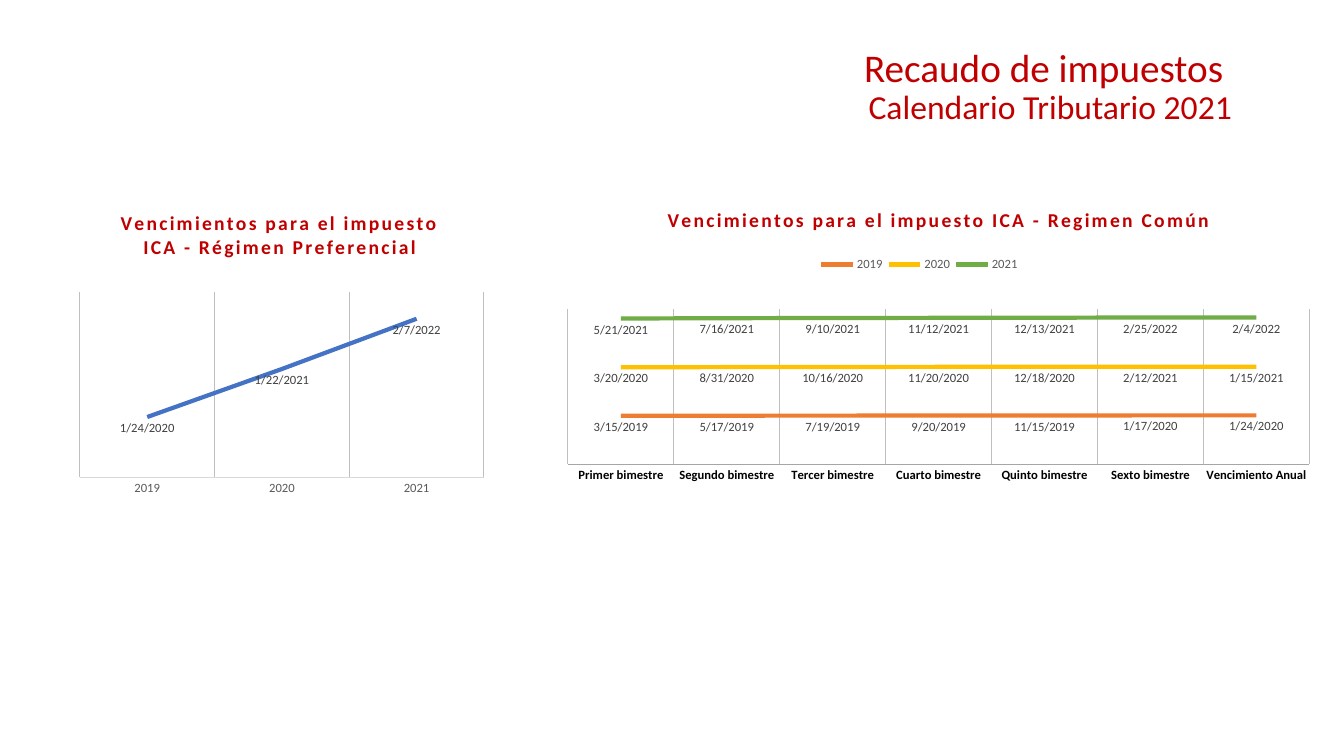
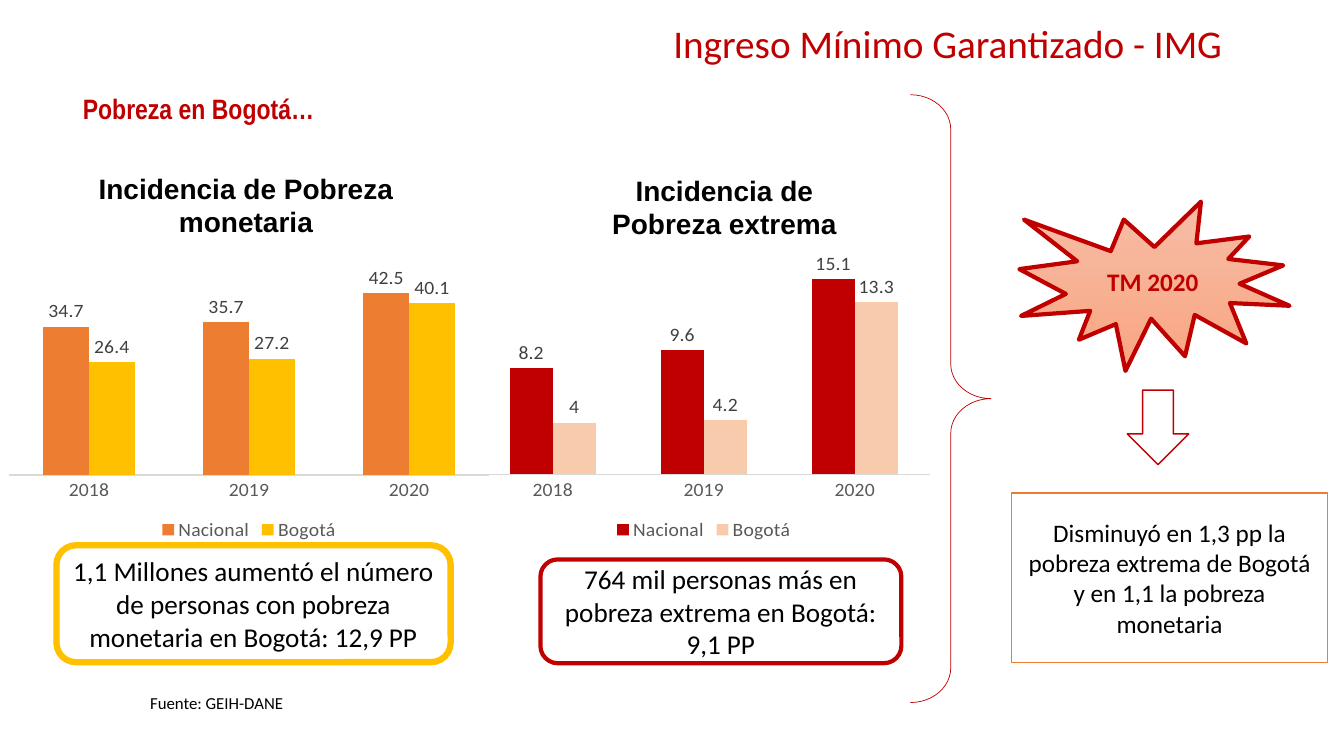
from lxml import etree
from pptx import Presentation
from pptx.chart.data import CategoryChartData
from pptx.dml.color import RGBColor
from pptx.enum.chart import XL_CHART_TYPE, XL_LABEL_POSITION, XL_LEGEND_POSITION, XL_TICK_MARK
from pptx.enum.shapes import MSO_SHAPE
from pptx.enum.text import MSO_ANCHOR, PP_ALIGN
from pptx.oxml.ns import qn
from pptx.util import Inches, Pt

RED = RGBColor(0xC0, 0x00, 0x00)
ORANGE = RGBColor(0xED, 0x7D, 0x31)
GOLD = RGBColor(0xFF, 0xC0, 0x00)
GREEN = RGBColor(0x70, 0xAD, 0x47)
BLUE = RGBColor(0x44, 0x72, 0xC4)
PEACH = RGBColor(0xF8, 0xCB, 0xAD)
SEAL_TOP = RGBColor(0xF7, 0xBD, 0xA5)
SEAL_BOTTOM = RGBColor(0xF8, 0xA5, 0x82)
BLACK = RGBColor(0x00, 0x00, 0x00)
WHITE = RGBColor(0xFF, 0xFF, 0xFF)
LABEL_GREY = RGBColor(0x40, 0x40, 0x40)
TEXT_GREY = RGBColor(0x59, 0x59, 0x59)
AXIS_GREY = RGBColor(0xD9, 0xD9, 0xD9)
DARK_AXIS_GREY = RGBColor(0xA6, 0xA6, 0xA6)
GRID_GREY = RGBColor(0xBF, 0xBF, 0xBF)

LEFT, CENTER, RIGHT = PP_ALIGN.LEFT, PP_ALIGN.CENTER, PP_ALIGN.RIGHT
TOP, MIDDLE = MSO_ANCHOR.TOP, MSO_ANCHOR.MIDDLE
LINE, LINE_STACKED = XL_CHART_TYPE.LINE, XL_CHART_TYPE.LINE_STACKED
COLUMNS = XL_CHART_TYPE.COLUMN_CLUSTERED
BELOW, OUTSIDE = XL_LABEL_POSITION.BELOW, XL_LABEL_POSITION.OUTSIDE_END
LEGEND_TOP, LEGEND_BOTTOM = XL_LEGEND_POSITION.TOP, XL_LEGEND_POSITION.BOTTOM
NO_TICK = XL_TICK_MARK.NONE
ROUNDED, RECTANGLE = MSO_SHAPE.ROUNDED_RECTANGLE, MSO_SHAPE.RECTANGLE
BRACE, SEAL, ARROW = MSO_SHAPE.RIGHT_BRACE, MSO_SHAPE.EXPLOSION1, MSO_SHAPE.DOWN_ARROW

DATE_FORMAT = "m/d/yyyy"
TITLE_ONLY = 5


def inches(box):
    return [Inches(v) for v in box]


def set_font(font, size, color, bold=False, name="Calibri"):
    values = {"size": Pt(size), "bold": bold, "name": name}
    for key, value in values.items():
        setattr(font, key, value)
    font.color.rgb = color


def set_line(line, color, width):
    line.color.rgb = color
    line.width = Pt(width)


def write(shape, lines, color=BLACK, align=CENTER, anchor=MIDDLE, bold=False,
          name="Calibri", spacing=None):
    """Fill a shape with (text, size) lines, one paragraph each."""
    tf = shape.text_frame
    tf.word_wrap = True
    tf.vertical_anchor = anchor
    for i, (text, size) in enumerate(lines):
        p = tf.add_paragraph() if i else tf.paragraphs[0]
        p.alignment = align
        p.line_spacing = spacing
        r = p.add_run()
        r.text = text
        set_font(r.font, size, color, bold, name)


def add_title(s, box, lines):
    title = s.shapes.title
    title.left, title.top, title.width, title.height = inches(box)
    title.text_frame.margin_top = title.text_frame.margin_bottom = 0
    write(title, lines, RED, RIGHT, spacing=0.9)


def add_text(s, box, text, size, **style):
    write(s.shapes.add_textbox(*inches(box)), [(text, size)], **style)


def add_shape(s, kind, box, line_color, width, fill=WHITE):
    shape = s.shapes.add_shape(kind, *inches(box))
    shape.shadow.inherit = False
    if fill is None:
        shape.fill.background()
    else:
        shape.fill.solid()
        shape.fill.fore_color.rgb = fill
    set_line(shape.line, line_color, width)
    return shape


def set_layout(parent, index, box, inner=False):
    """Place a plot area or legend by fractions of its chart."""
    for old in parent.findall(qn("c:layout")):
        parent.remove(old)
    layout = etree.Element(qn("c:layout"))
    manual = etree.SubElement(layout, qn("c:manualLayout"))
    values = {"layoutTarget": "inner"} if inner else {}
    values.update(xMode="edge", yMode="edge", **dict(zip("xywh", box)))
    for key, value in values.items():
        etree.SubElement(manual, qn("c:" + key)).set("val", str(value))
    parent.insert(index, layout)


def add_chart(s, kind, box, categories, series, scale, size, label_position, number_format="General",
              axis_line=(AXIS_GREY, 0.75), axis_font=(TEXT_GREY, False), legend=None):
    """Add a chart; series holds (name, values, colour)."""
    data = CategoryChartData(number_format=number_format)
    data.categories = categories
    for name, values, _ in series:
        data.add_series(name, values)
    chart = s.shapes.add_chart(kind, *inches(box), data).chart
    set_font(chart.font, size, BLACK)
    chart.has_title = False

    chart.has_legend = legend is not None
    if chart.has_legend:
        chart.legend.position = legend
        chart.legend.include_in_layout = False
        set_font(chart.legend.font, size, TEXT_GREY)

    axis = chart.category_axis
    axis.major_tick_mark = axis.minor_tick_mark = NO_TICK
    set_font(axis.tick_labels.font, size, *axis_font)
    set_line(axis.format.line, *axis_line)
    values_axis = chart.value_axis
    values_axis.minimum_scale, values_axis.maximum_scale = scale
    values_axis.has_major_gridlines = False
    values_axis.visible = False

    plot = chart.plots[0]
    plot.vary_by_categories = False
    for item, (_, _, color) in zip(plot.series, series):
        if kind == COLUMNS:
            item.format.fill.solid()
            item.format.fill.fore_color.rgb = color
        else:
            set_line(item.format.line, color, 3)
            item.smooth = False
        labels = item.data_labels
        labels.show_value = True
        labels.position = label_position
        labels.number_format = number_format
        labels.number_format_is_linked = False
        set_font(labels.font, size, LABEL_GREY)
    return chart


def add_due_dates(s, kind, box, title, plot_box, categories, series, scale, **style):
    """Add a line chart of dates with a spaced red title and vertical gridlines."""
    chart = add_chart(s, kind, box, categories, series, scale, 9, BELOW, DATE_FORMAT, **style)
    chart.has_title = True
    r = chart.chart_title.text_frame.paragraphs[0].add_run()
    r.text = title
    set_font(r.font, 14, RED, True)
    r.font._element.set("spc", "150")
    chart.chart_title.include_in_layout = False
    chart.category_axis.has_major_gridlines = True
    set_line(chart.category_axis.major_gridlines.format.line, GRID_GREY, 0.75)
    set_layout(chart.plots[0]._element.getparent(), 0, plot_box, inner=True)
    return chart


def add_poverty_columns(s, box, national, city, scale):
    """Add a column chart from the (values, colour) of the country and of the city."""
    series = [("Nacional", *national), ("Bogotá", *city)]
    chart = add_chart(s, COLUMNS, box, ["2018", "2019", "2020"], series, scale, 14, OUTSIDE,
                      legend=LEGEND_BOTTOM)
    chart.plots[0].gap_width = 150
    chart.plots[0].overlap = 0


def add_programme_effect(s, left, top):
    """Add the seal, the arrow and the outcome box in one column."""
    seal = add_shape(s, SEAL, (left + 0.08, top, 2.68, 1.68), RED, 3)
    seal.fill.gradient()
    seal.fill.gradient_angle = 270
    for stop, color in zip(seal.fill.gradient_stops, (SEAL_TOP, SEAL_BOTTOM)):
        stop.color.rgb = color
    write(seal, [("TM 2020", 18)], RED, bold=True)
    add_shape(s, ARROW, (left + 1.15, top + 1.87, 0.61, 0.74), RED, 1)
    outcome = add_shape(s, RECTANGLE, (left, top + 2.89, 3.14, 1.68), ORANGE, 1)
    write(outcome, [("Disminuyó en 1,3 pp la pobreza extrema de Bogotá "
                     "y en 1,1 la pobreza monetaria", 18)])


def tax_calendar_slide(prs):
    s = prs.slides.add_slide(prs.slide_layouts[TITLE_ONLY])
    add_title(s, (0.21, 0.47, 12.11, 0.8),
              [("Recaudo de impuestos ", 28), ("Calendario Tributario 2021", 24)])
    periods = ["Primer bimestre", "Segundo bimestre", "Tercer bimestre", "Cuarto bimestre",
               "Quinto bimestre", "Sexto bimestre", "Vencimiento Anual"]
    years = [
        ("2019", (43539, 43602, 43665, 43728, 43784, 43847, 43854), ORANGE),
        ("2020", (43910, 44074, 44120, 44155, 44183, 44239, 44211), GOLD),
        ("2021", (44337, 44393, 44449, 44512, 44543, 44617, 44596), GREEN),
    ]
    common = add_due_dates(
        s, LINE_STACKED, (5.48, 1.89, 7.66, 3.19),
        "Vencimientos para el impuesto ICA - Regimen Común", (0.02, 0.37, 0.96, 0.48),
        periods, years, (0, 140000), axis_line=(DARK_AXIS_GREY, 0.25),
        axis_font=(BLACK, True), legend=LEGEND_TOP)
    set_layout(common.legend._element, 1, (0.34, 0.19, 0.27, 0.08))
    add_due_dates(
        s, LINE, (0.62, 1.92, 4.31, 3.16),
        "Vencimientos para el impuesto ICA - Régimen Preferencial", (0.04, 0.31, 0.93, 0.58),
        ["2019", "2020", "2021"], [("Series 1", (43854, 44218, 44599), BLUE)],
        (43400, 44800), axis_line=(AXIS_GREY, 0.25))


def minimum_income_slide(prs):
    s = prs.slides.add_slide(prs.slide_layouts[TITLE_ONLY])
    add_title(s, (6.2, 0.17, 6.02, 0.57), [("Ingreso Mínimo Garantizado - IMG", 28)])
    add_text(s, (0, 0.72, 3.94, 0.71), "Pobreza en Bogotá…", 20,
             color=RED, bold=True, name="Arial Narrow")
    headings = [((0.61, 1.65, 3.66, 0.71), "Incidencia de Pobreza monetaria"),
                ((5.75, 1.67, 2.87, 0.71), "Incidencia de Pobreza extrema")]
    for box, text in headings:
        add_text(s, box, text, 20, anchor=TOP, bold=True, name="Arial")
    findings = [
        ((0.56, 5.41, 3.91, 1.16), GOLD, 4.5,
         "1,1 Millones aumentó el número de personas con pobreza monetaria en Bogotá: 12,9 PP"),
        ((5.36, 5.55, 3.58, 1.03), RED, 3,
         "764 mil personas más en pobreza extrema en Bogotá: 9,1 PP"),
    ]
    for box, color, width, text in findings:
        write(add_shape(s, ROUNDED, box, color, width), [(text, 19.4)])
    add_text(s, (1.39, 6.83, 2.91, 0.29), "Fuente: GEIH-DANE", 12, align=LEFT)
    add_poverty_columns(s, (4.64, 2.5, 4.68, 2.91), ((8.2, 9.6, 15.1), RED),
                        ((4, 4.2, 13.3), PEACH), (0, 16))
    add_poverty_columns(s, (-0.01, 2.64, 4.96, 2.77), ((34.7, 35.7, 42.5), ORANGE),
                        ((26.4, 27.2, 40.1), GOLD), (0, 45))
    brace = add_shape(s, BRACE, (9.03, 0.94, 0.8, 6.03), RED, 0.5, fill=None)
    brace.adjustments[0] = 0.43
    add_programme_effect(s, 10.03, 2)


def main():
    prs = Presentation()
    prs.slide_width, prs.slide_height = Inches(13.33), Inches(7.5)
    tax_calendar_slide(prs)
    minimum_income_slide(prs)
    prs.save("out.pptx")


if __name__ == "__main__":
    main()
